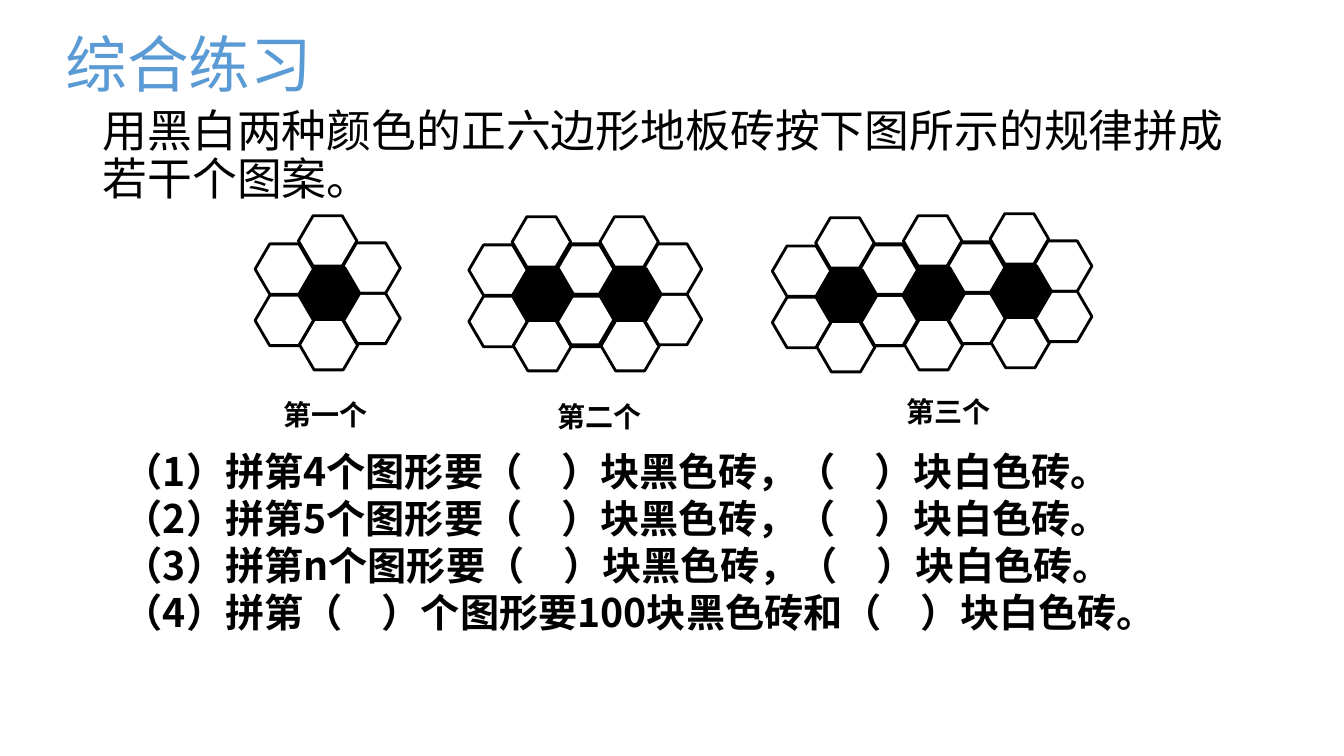
"""Build the exercise slide about patterns of black and white hexagonal tiles."""
import pptx
import pptx.dml.color
import pptx.enum.shapes
import pptx.enum.text
import pptx.oxml.ns
import pptx.util
from lxml import etree

Inches = pptx.util.Inches
Pt = pptx.util.Pt
ALIGN = pptx.enum.text.PP_ALIGN

HAN_FONT = "Noto Sans CJK SC"
BLACK = "000000"
BLUE = "5B9BD5"

HEADING = "综合练习"
STATEMENT = "用黑白两种颜色的正六边形地板砖按下图所示的规律拼成若干个图案。"
QUESTIONS = [
    "（1）拼第4个图形要（　）块黑色砖，（　）块白色砖。",
    "（2）拼第5个图形要（　）块黑色砖，（　）块白色砖。",
    "（3）拼第n个图形要（　）块黑色砖，（　）块白色砖。",
    "（4）拼第（　）个图形要100块黑色砖和（　）块白色砖。",
]

TILE_SIZE = (0.58, 0.5)
WHITE_OFFSETS = [(0.41, -0.25), (0.41, 0.25), (-0.02, -0.52),
                 (-0.01, 0.51), (-0.45, -0.24), (-0.45, 0.27)]

# Each pattern: label, label box, then (left, top, white tiles) per black tile.
PATTERNS = [
    ("第一个", (2.48, 3.86, 1.5, 0.5), [(2.98, 2.66, 6)]),
    ("第二个", (5.19, 3.85, 1.51, 0.56), [(5.97, 2.67, 6), (5.1, 2.67, 6)]),
    ("第三个", (8.63, 3.83, 1.56, 0.5),
     [(9.84, 2.64, 5), (8.98, 2.66, 6), (8.11, 2.68, 6)]),
]


def color(value):
    return pptx.dml.color.RGBColor.from_string(value)


def add_text(shapes, lines, box, size, font=HAN_FONT, fill=BLACK, bold=False,
             align=ALIGN.LEFT, wrap=True, spacing=1.2):
    frame = shapes.add_textbox(*map(Inches, box)).text_frame
    frame.word_wrap = wrap
    frame.vertical_anchor = pptx.enum.text.MSO_ANCHOR.MIDDLE
    frame.text = "\n".join(lines)
    for paragraph in frame.paragraphs:
        paragraph.alignment = align
        paragraph.line_spacing = Pt(size * spacing)
        paragraph.font.size = Pt(size)
        paragraph.font.bold = bold
        paragraph.font.color.rgb = color(fill)
        paragraph.font.name = font
        properties = paragraph._p.pPr.find(pptx.oxml.ns.qn("a:defRPr"))
        etree.SubElement(properties, pptx.oxml.ns.qn("a:ea"), typeface=HAN_FONT)


def add_tile(shapes, left, top, black):
    tile = shapes.add_shape(pptx.enum.shapes.MSO_SHAPE.HEXAGON,
                            *map(Inches, (left, top, *TILE_SIZE)))
    tile.adjustments[0] = 0.292
    tile.shadow.inherit = False
    tile.line.color.rgb = color(BLACK)
    tile.line.width = Pt(3 if black else 2)
    if black:
        tile.fill.solid()
        tile.fill.fore_color.rgb = color(BLACK)
    else:
        tile.fill.background()


def add_pattern(slide, label, label_box, black_tiles):
    shapes = slide.shapes.add_group_shape().shapes
    for left, top, white_count in black_tiles:
        add_tile(shapes, left, top, True)
        for across, down in WHITE_OFFSETS[:white_count]:
            add_tile(shapes, left + across, top + down, False)
    add_text(shapes, [label], label_box, 20, font="Arial", bold=True,
             align=ALIGN.CENTER)


def main():
    presentation = pptx.Presentation()
    presentation.slide_width = Inches(13.33)
    presentation.slide_height = Inches(7.5)
    slide = presentation.slides.add_slide(presentation.slide_layouts[6])
    add_text(slide.shapes, [STATEMENT], (0.92, 0.83, 11.5, 1.45), 32, spacing=1.07)
    for pattern in PATTERNS:
        add_pattern(slide, *pattern)
    add_text(slide.shapes, QUESTIONS, (1.13, 4.29, 11.5, 2.17), 28, bold=True)
    add_text(slide.shapes, [HEADING], (0.54, 0.2, 2.67, 0.84), 44, fill=BLUE,
             align=ALIGN.CENTER, wrap=False)
    presentation.save("out.pptx")


if __name__ == "__main__":
    main()
